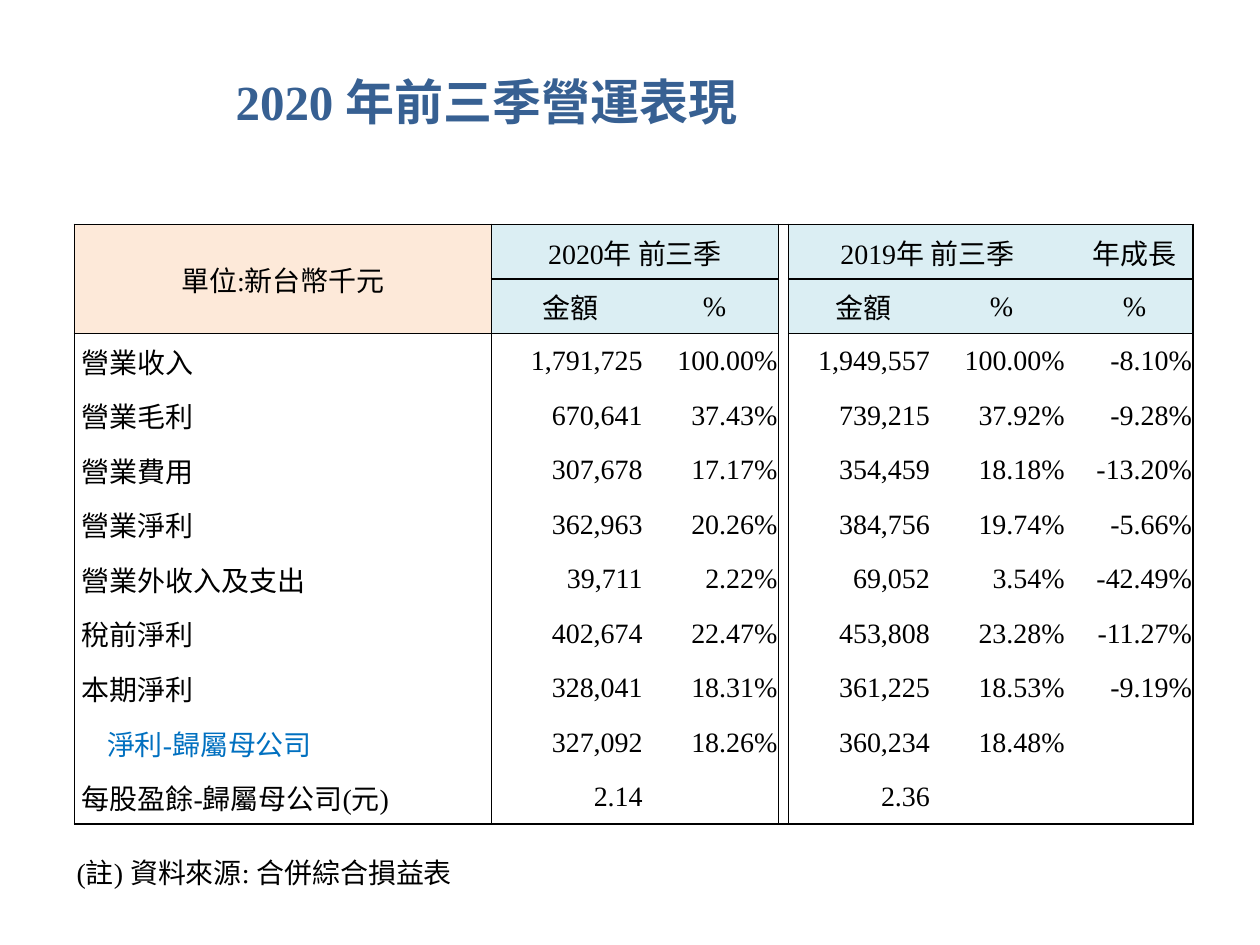
from lxml.etree import SubElement
from pptx import Presentation
from pptx.dml.color import RGBColor
from pptx.enum.text import MSO_ANCHOR, PP_ALIGN
from pptx.oxml.ns import qn
from pptx.util import Inches, Pt

FONT = "Times New Roman"
BLACK = RGBColor(0x00, 0x00, 0x00)
TITLE_BLUE = RGBColor(0x37, 0x60, 0x92)
LINK_BLUE = RGBColor(0x00, 0x70, 0xC0)
PEACH = RGBColor(0xFD, 0xE9, 0xD9)
PALE_BLUE = RGBColor(0xDB, 0xEE, 0xF3)

COLUMN_WIDTHS = [3.31, 1.26, 1.02, 0.08, 1.18, 1.02, 0.08, 0.93]
TABLE_HEIGHT = 4.76
HEADER_ROWS = 2
GAP_COLUMN = 3
AMOUNT_COLUMNS = (1, 4)
VERTICAL_RULES = (0, 1, 3, 4, 8)
SUB_ITEM = "淨利-歸屬母公司"

ROWS = [
    ["單位:新台幣千元", "2020年 前三季", "", "", "2019年 前三季", "", "", "年成長"],
    ["", "金額", "%", "", "金額", "%", "", "%"],
    ["營業收入", "1,791,725", "100.00%", "", "1,949,557", "100.00%", "", "-8.10%"],
    ["營業毛利", "670,641", "37.43%", "", "739,215", "37.92%", "", "-9.28%"],
    ["營業費用", "307,678", "17.17%", "", "354,459", "18.18%", "", "-13.20%"],
    ["營業淨利", "362,963", "20.26%", "", "384,756", "19.74%", "", "-5.66%"],
    ["營業外收入及支出", "39,711", "2.22%", "", "69,052", "3.54%", "", "-42.49%"],
    ["稅前淨利", "402,674", "22.47%", "", "453,808", "23.28%", "", "-11.27%"],
    ["本期淨利", "328,041", "18.31%", "", "361,225", "18.53%", "", "-9.19%"],
    [SUB_ITEM, "327,092", "18.26%", "", "360,234", "18.48%", "", ""],
    ["每股盈餘-歸屬母公司(元)", "2.14", "", "", "2.36", "", "", ""],
]


def add_run(para, text, size, color, bold=False):
    """Add one formatted run to a paragraph."""
    span = para.add_run()
    span.text = text
    span.font.name = FONT
    span.font.size = Pt(size)
    span.font.bold = bold
    span.font.color.rgb = color


def add_title(page, text):
    """Move the title placeholder into place and fill it."""
    box = page.shapes.title
    box.left, box.top = Inches(1.77), Inches(0.52)
    box.width, box.height = Inches(4.25), Inches(0.57)
    frame = box.text_frame
    frame.word_wrap = True
    frame.vertical_anchor = MSO_ANCHOR.TOP
    para = frame.paragraphs[0]
    para.alignment = PP_ALIGN.LEFT
    add_run(para, text, 28, TITLE_BLUE, bold=True)


def add_note(page, text):
    """Add the source note below the table."""
    box = page.shapes.add_textbox(Inches(0.51), Inches(6.74), Inches(3.22), Inches(0.37))
    box.text_frame.word_wrap = True
    add_run(box.text_frame.paragraphs[0], text, 16, BLACK)


def has_horizontal_rule(edge, column):
    """Tell whether a horizontal line runs along this row edge."""
    if edge in (0, len(ROWS)):
        return True
    if column == GAP_COLUMN:
        return False
    return edge == HEADER_ROWS or (edge == 1 and column > 0)


def set_borders(cell, row, column):
    """Draw or clear the four edges of a cell."""
    right = column + (cell.span_width if cell.is_merge_origin else 1)
    bottom = row + (cell.span_height if cell.is_merge_origin else 1)
    edges = {
        "a:lnL": column in VERTICAL_RULES,
        "a:lnR": right in VERTICAL_RULES,
        "a:lnT": has_horizontal_rule(row, column),
        "a:lnB": has_horizontal_rule(bottom, column),
    }
    properties = cell._tc.get_or_add_tcPr()
    for index, (tag, visible) in enumerate(edges.items()):
        line = SubElement(properties, qn(tag), w=str(Pt(1)))
        properties.insert(index, line)
        if visible:
            fill = SubElement(line, qn("a:solidFill"))
            SubElement(fill, qn("a:srgbClr"), val=str(BLACK))
        else:
            SubElement(line, qn("a:noFill"))


def set_fill(cell, row, column):
    """Colour header cells and leave the others clear."""
    if row >= HEADER_ROWS or column == GAP_COLUMN:
        cell.fill.background()
        return
    cell.fill.solid()
    cell.fill.fore_color.rgb = PALE_BLUE if column else PEACH


def fill_cell(cell, text, row, column):
    """Set the text, margins, fill and borders of a cell."""
    cell.vertical_anchor = MSO_ANCHOR.MIDDLE
    cell.margin_left = cell.margin_right = cell.margin_top = Inches(0.01)
    cell.margin_bottom = 0
    para = cell.text_frame.paragraphs[0]
    if row < HEADER_ROWS:
        para.alignment = PP_ALIGN.CENTER
    elif column == 0:
        para.alignment = PP_ALIGN.LEFT
        cell.margin_left = Inches(0.26 if text == SUB_ITEM else 0.06)
    else:
        para.alignment = PP_ALIGN.RIGHT
        if column in AMOUNT_COLUMNS:
            cell.margin_right = Inches(0.06)
    if text:
        add_run(para, text, 16, LINK_BLUE if text == SUB_ITEM else BLACK)
    set_fill(cell, row, column)
    set_borders(cell, row, column)


def add_results_table(page):
    """Add the table of results with its merged headings."""
    frame = page.shapes.add_table(
        len(ROWS), len(COLUMN_WIDTHS), Inches(0.59), Inches(1.78),
        Inches(sum(COLUMN_WIDTHS)), Inches(TABLE_HEIGHT))
    table = frame.table
    table.first_row = table.horz_banding = False
    for column, width in zip(table.columns, COLUMN_WIDTHS):
        column.width = Inches(width)
    for row in table.rows:
        row.height = Inches(TABLE_HEIGHT / len(ROWS))
    table.cell(0, 0).merge(table.cell(1, 0))
    for column in AMOUNT_COLUMNS:
        table.cell(0, column).merge(table.cell(0, column + 1))
    for row, texts in enumerate(ROWS):
        for column, text in enumerate(texts):
            fill_cell(table.cell(row, column), text, row, column)


def main():
    """Build and save the deck."""
    deck = Presentation()
    deck.slide_width, deck.slide_height = Inches(10), Inches(7.5)
    page = deck.slides.add_slide(deck.slide_layouts[5])
    add_title(page, "2020 年前三季營運表現")
    add_note(page, "(註) 資料來源: 合併綜合損益表")
    add_results_table(page)
    deck.save("out.pptx")


if __name__ == "__main__":
    main()
